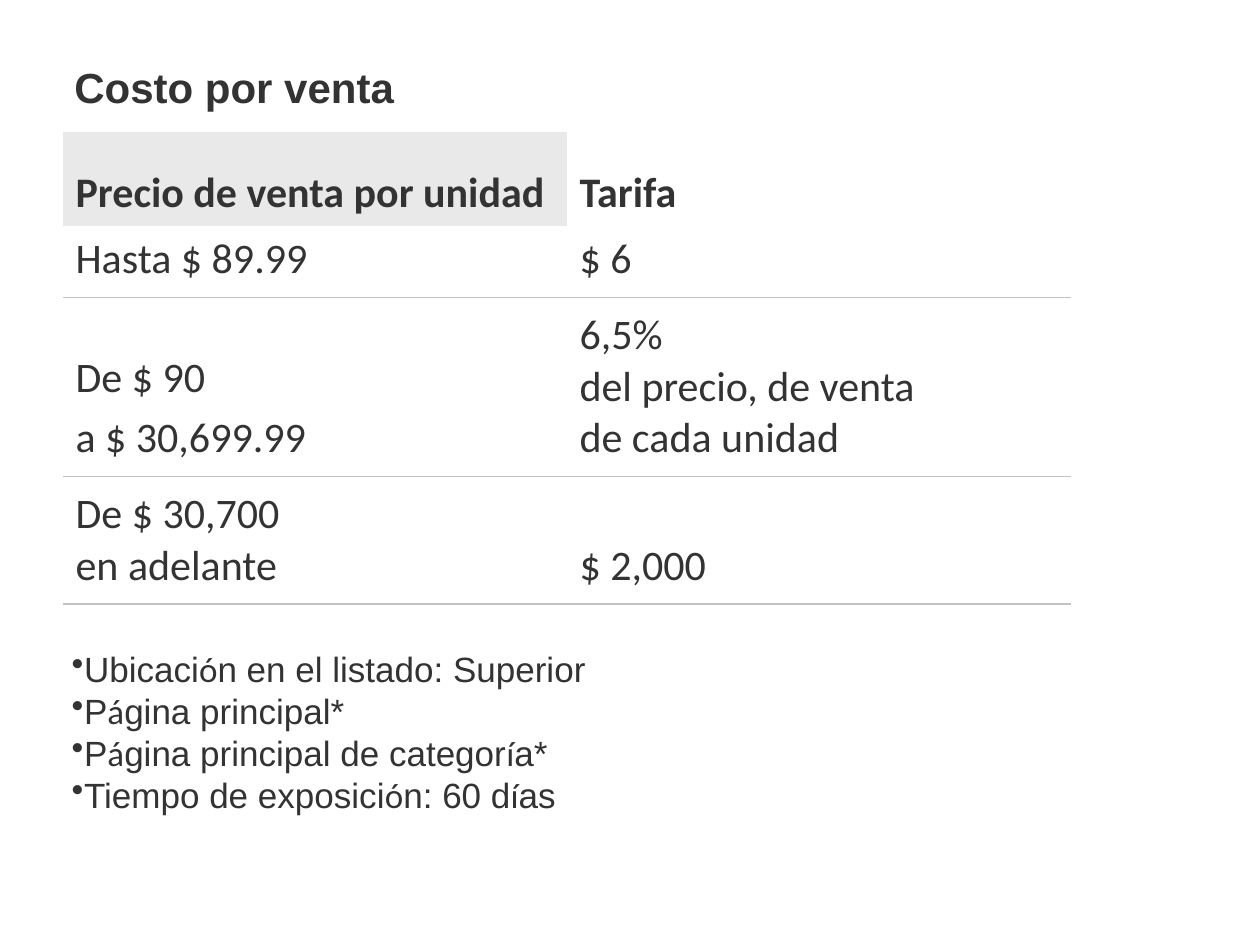
from itertools import groupby

from lxml.etree import SubElement
from pptx import Presentation
from pptx.dml.color import RGBColor
from pptx.enum.text import MSO_ANCHOR, PP_ALIGN
from pptx.oxml import parse_xml
from pptx.oxml.ns import nsdecls, qn
from pptx.util import Inches, Pt

THEME = {
    "ink": "333333", "head": "E9E9E9", "rule": "C2C2C2",
    "sans": "Arial", "body": "Calibri", "large": 24, "small": 20,
}
TITLE = "Costo por venta"
ROWS = [
    (0.74, ["Precio de venta por unidad"], ["Tarifa"]),
    (0.57, ["Hasta $ 89.99"], ["$ 6"]),
    (1.32, ["De $ 90", "a $ 30,699.99"],
     ["6,5%\ndel precio, de venta\nde cada unidad"]),
    (0.82, ["De $ 30,700\nen adelante"], ["$ 2,000"]),
]
NOTES = [
    "Ubicación en el listado: Superior",
    "Página principal*",
    "Página principal de categoría*",
    "Tiempo de exposición: 60 días",
]
PLAIN = "{2D5ABB26-0587-4C30-8999-92F81FD0307C}"


def add_run(para, text, face, size, bold=False):
    """Add one styled run to a paragraph."""
    run = para.add_run()
    run.text = text
    font = run.font
    font.name, font.size, font.bold = THEME[face], Pt(THEME[size]), bold
    font.color.rgb = RGBColor.from_string(THEME["ink"])


def next_para(frame, index):
    """Return the first paragraph, or a new one after it."""
    return frame.add_paragraph() if index else frame.paragraphs[0]


def add_rule(cell):
    """Draw the thin line under a cell."""
    line = parse_xml(
        f'<a:lnB {nsdecls("a")} w="12700"><a:solidFill>'
        f'<a:srgbClr val="{THEME["rule"]}"/></a:solidFill></a:lnB>')
    cell._tc.get_or_add_tcPr().insert(0, line)


def fill_cell(cell, paras, head):
    """Write the paragraphs of one table cell."""
    cell.vertical_anchor = MSO_ANCHOR.BOTTOM
    cell.margin_left = cell.margin_right = Inches(0.1)
    cell.margin_top = cell.margin_bottom = Inches(0.05 if head else 0.1)
    for index, text in enumerate(paras):
        para = next_para(cell.text_frame, index)
        para.space_after = Pt(10)
        if index:
            para.space_before = Pt(12)
        lines = text.split("\n")
        if len(lines) == 1:
            para.line_spacing = Pt(12)
        for row, line in enumerate(lines):
            if row:
                para.add_line_break()
            add_run(para, line, "body", "large", head)


def add_title(slide):
    """Place and fill the title."""
    title = slide.shapes.title
    title.left, title.top = Inches(0.49), Inches(0.32)
    title.width, title.height = Inches(6.03), Inches(1.46)
    frame = title.text_frame
    frame.vertical_anchor = MSO_ANCHOR.TOP
    frame.margin_top = Inches(0.17)
    para = frame.paragraphs[0]
    para.alignment = PP_ALIGN.LEFT
    add_run(para, TITLE, "sans", "large", True)


def add_rates(slide):
    """Build the table of rates."""
    high = sum(row[0] for row in ROWS)
    table = slide.shapes.add_table(
        len(ROWS), 2, Inches(0.5), Inches(1.05), Inches(8), Inches(high)).table
    table._tbl.tblPr.find(qn("a:tableStyleId")).text = PLAIN
    table.horz_banding = False
    for r, (tall, *cells) in enumerate(ROWS):
        table.rows[r].height = Inches(tall)
        for c, paras in enumerate(cells):
            cell = table.cell(r, c)
            fill_cell(cell, paras, r == 0)
            if r == c == 0:
                cell.fill.solid()
                cell.fill.fore_color.rgb = RGBColor.from_string(THEME["head"])
            else:
                cell.fill.background()
            if r:
                add_rule(cell)


def add_notes(slide):
    """Add the bullet list, with accented letters in the body face."""
    box = slide.shapes.add_textbox(
        Inches(0.47), Inches(5.08), Inches(7.27), Inches(1.45))
    frame = box.text_frame
    frame.word_wrap = True
    frame.vertical_anchor = MSO_ANCHOR.MIDDLE
    for index, text in enumerate(NOTES):
        para = next_para(frame, index)
        props = para._p.get_or_add_pPr()
        SubElement(props, qn("a:buChar"), char="•")
        tabs = SubElement(props, qn("a:tabLst"))
        SubElement(tabs, qn("a:tab"), pos=str(Inches(0.5)), algn="l")
        for accent, chars in groupby(text, lambda char: char in "áíó"):
            add_run(para, "".join(chars), "body" if accent else "sans", "small")


def main():
    """Build and save the slide."""
    deck = Presentation()
    deck.slide_width, deck.slide_height = Inches(10), Inches(7.5)
    slide = deck.slides.add_slide(deck.slide_layouts[5])
    add_title(slide)
    add_rates(slide)
    add_notes(slide)
    deck.save("out.pptx")


if __name__ == "__main__":
    main()
